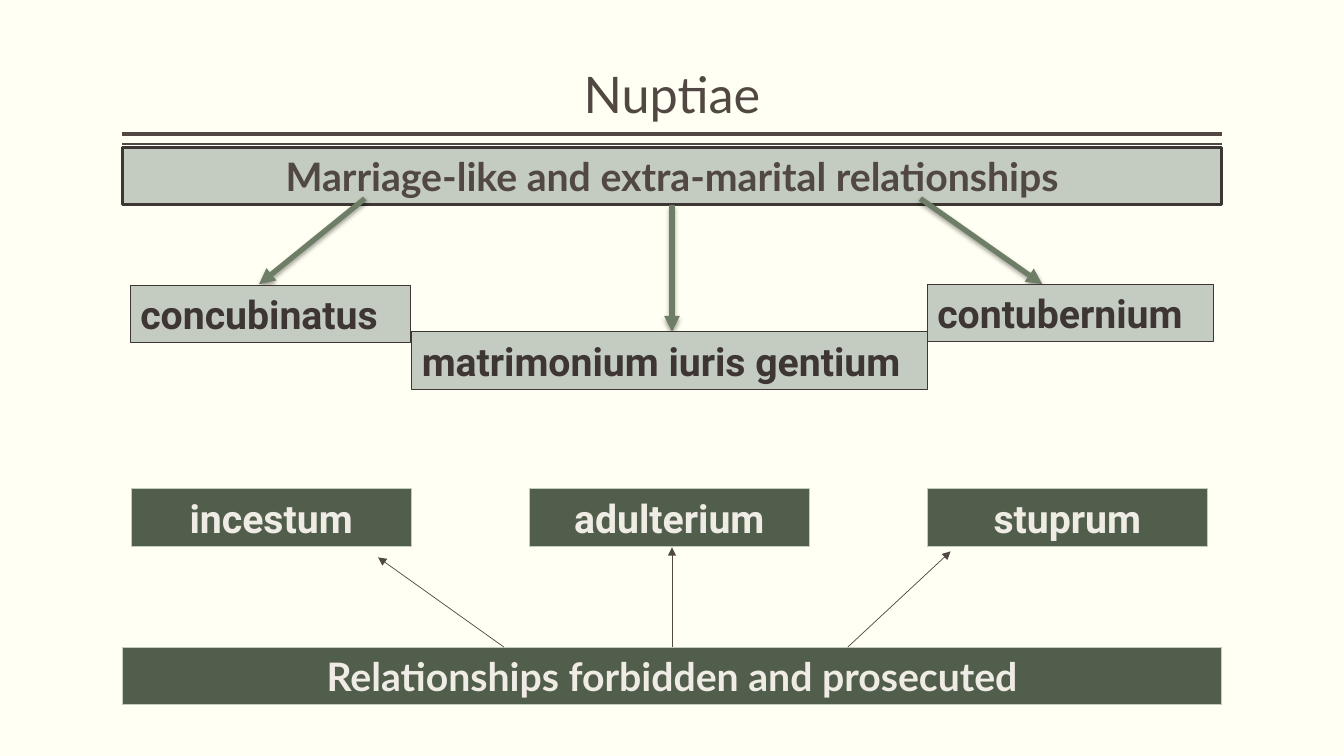
from pptx import Presentation
from pptx.dml.color import RGBColor
from pptx.enum.shapes import MSO_CONNECTOR as Connector, MSO_SHAPE as Shape
from pptx.enum.text import MSO_ANCHOR as Anchor, MSO_AUTO_SIZE as AutoSize, PP_ALIGN as Align
from pptx.oxml import parse_xml
from pptx.oxml.ns import nsdecls, qn
from pptx.util import Inches, Pt

COLORS = {
    "paper": "FFFFF3", "brown": "514843", "dark": "3D3632", "sage": "C4CCC1",
    "green": "6D7D66", "forest": "525E4C", "cream": "EFEBE5", "black": "000000",
}
LIGHT = {"fill": "sage", "border": "dark", "color": "dark"}
DEEP = {"fill": "forest", "border": "sage", "color": "cream"}
LEFT, FULL, MIDDLE = 9.1, 81.8, 50
BOX_WIDTH, BOX_HEIGHT = 20.85, 7.6
HEADER_TOP, FORBIDDEN_TOP, FOOTER_TOP = 19.5, 64.67, 85.6


class Diagram:
    """Draws styled elements on one slide, with lengths in percent of its size."""

    def __init__(self):
        self.deck = Presentation()
        self.deck.slide_width, self.deck.slide_height = Inches(13.333), Inches(7.5)
        self.slide = self.deck.slides.add_slide(self.deck.slide_layouts[5])
        self.paint(self.slide.background.fill, "paper")

    def paint(self, fill, color):
        fill.solid()
        fill.fore_color.rgb = RGBColor.from_string(COLORS[color])

    def x(self, percent):
        return round(self.deck.slide_width * percent / 100)

    def y(self, percent):
        return round(self.deck.slide_height * percent / 100)

    def label(self, frame, text, font, size, color, align, bold):
        frame.text = text
        paragraph = frame.paragraphs[0]
        paragraph.alignment = align
        style = paragraph.runs[0].font
        style.name, style.size, style.bold = font, Pt(size), bold
        style.color.rgb = RGBColor.from_string(COLORS[color])
        return paragraph

    def title(self, text):
        heading = self.slide.shapes.title
        heading.left, heading.top = self.x(LEFT), self.y(1.07)
        heading.width, heading.height = self.x(FULL), self.y(16)
        frame = heading.text_frame
        frame.word_wrap, frame.auto_size = True, AutoSize.NONE
        frame.vertical_anchor = Anchor.BOTTOM
        frame.margin_left = frame.margin_right = 0
        paragraph = self.label(frame, text, "Lato", 36, "brown", Align.CENTER, False)
        paragraph.line_spacing = 0.9

    def box(self, text, left, top, width, fill, border, color,
            font="Roboto", align=Align.CENTER, weight=0.75):
        box = self.slide.shapes.add_shape(
            Shape.RECTANGLE, self.x(left), self.y(top), self.x(width), self.y(BOX_HEIGHT))
        box.shadow.inherit = False
        self.paint(box.fill, fill)
        self.paint(box.line.fill, border)
        box.line.width = Pt(weight)
        box.text_frame.word_wrap = True
        box.text_frame.auto_size = AutoSize.SHAPE_TO_FIT_TEXT
        self.label(box.text_frame, text, font, 28, color, align, True)
        return box

    def line(self, start, end, color, weight, arrow=False, shadow=False):
        line = self.slide.shapes.add_connector(
            Connector.STRAIGHT, self.x(start[0]), self.y(start[1]), self.x(end[0]), self.y(end[1]))
        self.paint(line.line.fill, color)
        line.line.width = Pt(weight)
        properties = line._element.spPr
        if arrow:
            properties.find(qn("a:ln")).append(
                parse_xml(f'<a:tailEnd {nsdecls("a")} type="triangle"/>'))
        effect = (
            f'<a:outerShdw blurRad="{Pt(3.5)}" dist="{Pt(2)}" dir="5400000" rotWithShape="0">'
            f'<a:srgbClr val="{COLORS["black"]}"><a:alpha val="38000"/></a:srgbClr>'
            '</a:outerShdw>') if shadow else ""
        properties.append(parse_xml(f'<a:effectLst {nsdecls("a")}>{effect}</a:effectLst>'))
        return line


def main():
    diagram = Diagram()
    diagram.title("Nuptiae")
    for rule_y, weight in ((17.73, 3), (19.07, 1)):
        diagram.line((LEFT + FULL, rule_y), (LEFT, rule_y), "brown", weight)

    header = diagram.box("Marriage-like and extra-marital relationships", LEFT, HEADER_TOP, FULL,
                         "sage", "dark", "brown", font="Lato", weight=2.25)
    header_bottom = HEADER_TOP + BOX_HEIGHT
    for start, end in (((27.15, 26.27), (19.28, 37.6)),
                       ((MIDDLE, header_bottom), (MIDDLE, 43.87)),
                       ((68.48, 26.27), (77.55, 37.6))):
        branch = diagram.line(start, end, "green", 3.78, arrow=True, shadow=True)
        if start[0] == MIDDLE:
            branch.begin_connect(header, 2)

    for union, left, top, width in (("concubinatus", 9.7, 37.73, BOX_WIDTH),
                                    ("matrimonium iuris gentium", 30.65, 43.87, 38.35),
                                    ("contubernium", 69, 37.6, 21.3)):
        diagram.box(union, left, top, width, align=Align.LEFT, **LIGHT)

    footer = diagram.box("Relationships forbidden and prosecuted", LEFT, FOOTER_TOP, FULL,
                         font="Lato", **DEEP)
    for start_x, end in ((MIDDLE, (MIDDLE, 72.4)), (37.5, (28.13, 73.73)), (63.08, (70.73, 72.93))):
        branch = diagram.line((start_x, FOOTER_TOP), end, "brown", 0.5, arrow=True)
        if start_x == MIDDLE:
            branch.begin_connect(footer, 0)

    for column, offence in enumerate(("incestum", "adulterium", "stuprum")):
        diagram.box(offence, 9.75 + column * 29.62, FORBIDDEN_TOP, BOX_WIDTH, **DEEP)

    diagram.deck.save("out.pptx")


if __name__ == "__main__":
    main()
